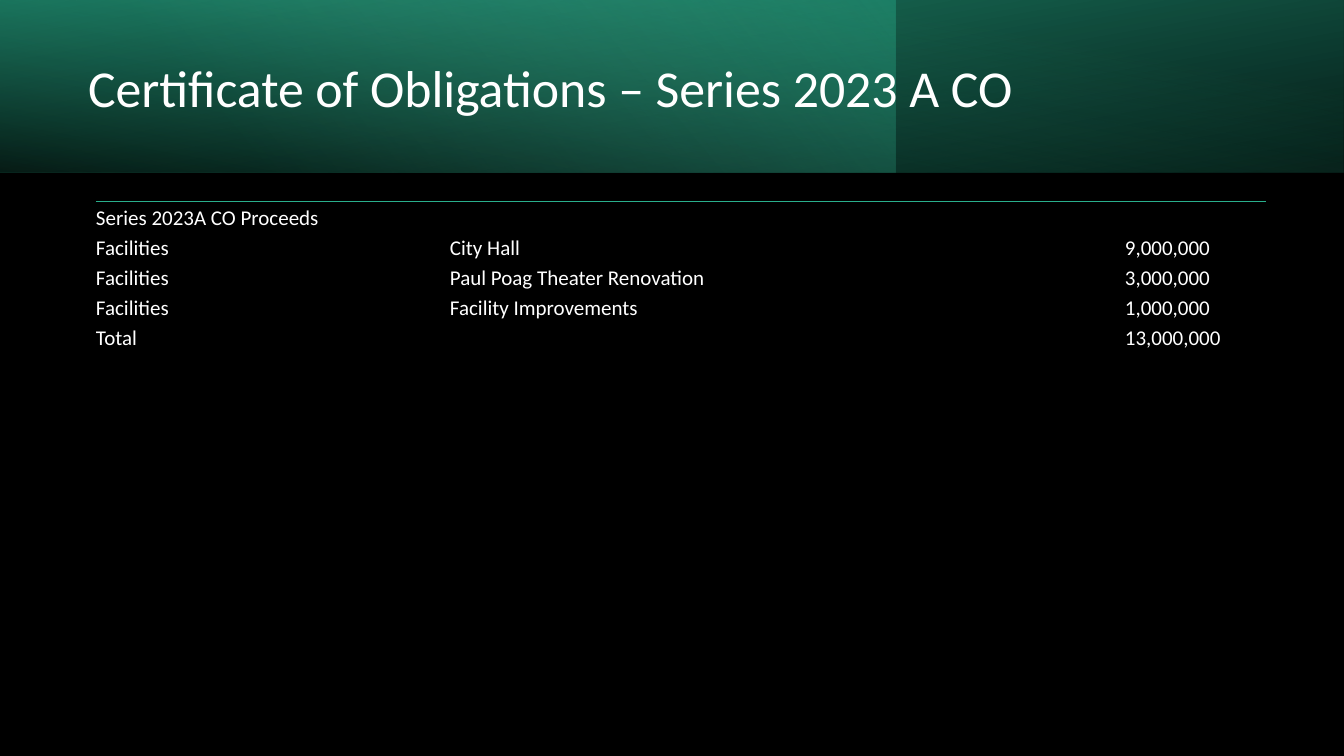
"""Build the Series 2023 A certificate of obligations slide."""
import lxml.etree
import pptx
import pptx.dml.color
import pptx.enum.shapes
import pptx.enum.text
import pptx.oxml
import pptx.oxml.ns
import pptx.util

RGB = pptx.dml.color.RGBColor
BLACK = RGB(0x00, 0x00, 0x00)
WHITE = RGB(0xFF, 0xFF, 0xFF)
GREEN = RGB(0x29, 0xAF, 0x8C)
DARK_GREEN = RGB(0x1F, 0x83, 0x69)
MINT = RGB(0x70, 0xDE, 0xC1)

TITLE = "Certificate of Obligations – Series 2023 A CO"
ROWS = [
    ("Series 2023A CO Proceeds", "", ""),
    ("Facilities", "City Hall", "9,000,000"),
    ("Facilities", "Paul Poag Theater Renovation", "3,000,000"),
    ("Facilities", "Facility Improvements", "1,000,000"),
    ("Total", "", "13,000,000"),
]
COLUMNS = (354, 675, 141)
ROW_HEIGHT = 30
TABLE_LEFT, TABLE_TOP = 96, 201
TITLE_BOX = (78, 27, 1188, 128)
SLIDE_WIDTH, SLIDE_HEIGHT, BAND_HEIGHT = 1344, 756, 173
BANDS = [
    dict(width=1344, angle=100, rotation=180, flip=True,
         stops=[(0, BLACK, 96), (100, DARK_GREEN, 100)]),
    dict(width=896, angle=140, rotation=0, flip=False,
         stops=[(0, GREEN, 41), (74, MINT, 0)]),
    dict(width=1344, angle=260, rotation=0, flip=True,
         stops=[(0, BLACK, 63), (78, GREEN, 15)]),
]
NO_STYLE = "{2D5ABB26-0587-4C30-8999-92F81FD0307C}"
NS = pptx.oxml.ns.nsdecls("a")
qn = pptx.oxml.ns.qn


def px(n):
    return pptx.util.Emu(round(n * 914400 / 100.8))


def write(tf, text, size, color=WHITE, font="Calibri", spacing=None):
    p = tf.paragraphs[0]
    p.line_spacing = spacing
    if not text:
        end = lxml.etree.SubElement(p._p, qn("a:endParaRPr"))
        end.set("sz", str(size * 100))
        return
    r = p.add_run()
    r.text = text
    r.font.size = pptx.util.Pt(size)
    r.font.name = font
    r.font.color.rgb = color


def add_band(s, width, angle, rotation, flip, stops):
    sp = s.shapes.add_shape(pptx.enum.shapes.MSO_SHAPE.RECTANGLE,
                            0, 0, px(width), px(BAND_HEIGHT))
    sp.shadow.inherit = False
    sp.line.fill.background()
    sp.rotation = rotation
    if flip:
        sp._element.spPr.find(qn("a:xfrm")).set("flipH", "1")
    marks = "".join(
        f'<a:gs pos="{pos * 1000}"><a:srgbClr val="{color}">'
        f'<a:alpha val="{alpha * 1000}"/></a:srgbClr></a:gs>'
        for pos, color, alpha in stops)
    grad = pptx.oxml.parse_xml(
        f'<a:gradFill {NS} rotWithShape="1"><a:gsLst>{marks}</a:gsLst>'
        f'<a:lin ang="{angle * 60000}" scaled="0"/></a:gradFill>')
    sp._element.spPr.find(qn("a:prstGeom")).addnext(grad)


def add_top_border(cell):
    line = pptx.oxml.parse_xml(
        f'<a:lnT {NS} w="9525"><a:solidFill><a:srgbClr val="{GREEN}"/>'
        f'</a:solidFill></a:lnT>')
    cell._tc.get_or_add_tcPr().insert(0, line)


def add_proceeds(s):
    frame = s.shapes.add_table(len(ROWS), len(COLUMNS), px(TABLE_LEFT), px(TABLE_TOP),
                               px(sum(COLUMNS)), px(ROW_HEIGHT * len(ROWS)))
    table = frame.table
    table.first_row = table.horz_banding = False
    table._tbl.tblPr.find(qn("a:tableStyleId")).text = NO_STYLE
    for column, width in zip(table.columns, COLUMNS):
        column.width = px(width)
    for i, row in enumerate(ROWS):
        table.rows[i].height = px(ROW_HEIGHT)
        for j, text in enumerate(row):
            cell = table.cell(i, j)
            cell.margin_left = cell.margin_right = 0
            cell.margin_top = cell.margin_bottom = 0
            cell.vertical_anchor = pptx.enum.text.MSO_ANCHOR.BOTTOM
            cell.fill.background()
            write(cell.text_frame, text, size=15)
            if i == 0:
                add_top_border(cell)


def main():
    prs = pptx.Presentation()
    prs.slide_width, prs.slide_height = px(SLIDE_WIDTH), px(SLIDE_HEIGHT)
    s = prs.slides.add_slide(prs.slide_layouts[5])
    s.background.fill.solid()
    s.background.fill.fore_color.rgb = BLACK
    for band in BANDS:
        add_band(s, **band)

    title = s.shapes.title
    title.left, title.top, title.width, title.height = map(px, TITLE_BOX)
    s.shapes._spTree.append(title._element)
    tf = title.text_frame
    tf.word_wrap = True
    tf.vertical_anchor = pptx.enum.text.MSO_ANCHOR.MIDDLE
    tf.paragraphs[0].alignment = pptx.enum.text.PP_ALIGN.LEFT
    write(tf, TITLE, size=37, spacing=0.9)

    add_proceeds(s)
    prs.save("out.pptx")


if __name__ == "__main__":
    main()
